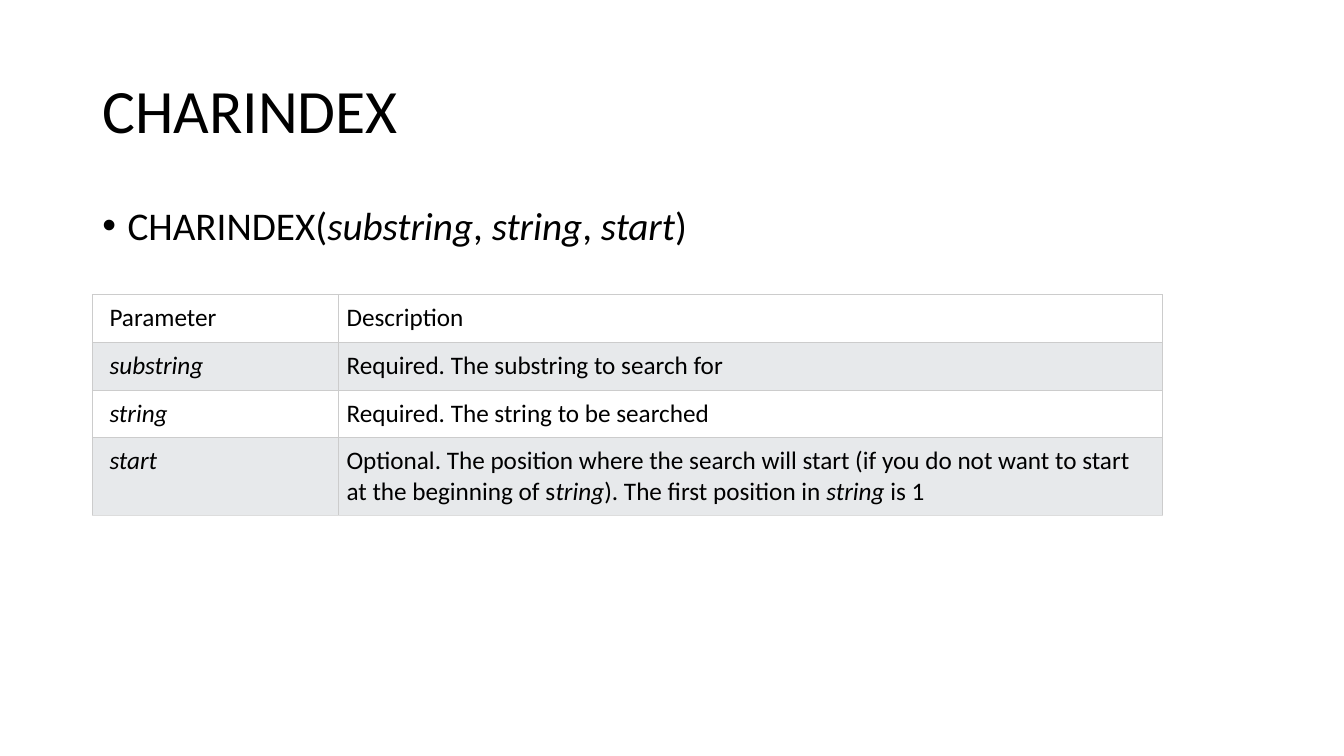
import pptx
import pptx.dml.color
import pptx.enum.text
import pptx.oxml
import pptx.oxml.ns
import pptx.util

BLACK = pptx.dml.color.RGBColor(0x00, 0x00, 0x00)
WHITE = pptx.dml.color.RGBColor(0xFF, 0xFF, 0xFF)
BAND = pptx.dml.color.RGBColor(0xE7, 0xE9, 0xEB)
BORDER = pptx.dml.color.RGBColor(0xCC, 0xCC, 0xCC)
LAST_BORDER = pptx.dml.color.RGBColor(0xDD, 0xDD, 0xDD)

# Asterisks enclose italic words.
PARAMETERS = [
    ("Parameter", "Description"),
    ("*substring*", "Required. The substring to search for"),
    ("*string*", "Required. The string to be searched"),
    ("*start*", "Optional. The position where the search will start (if you do not "
                "want to start at the beginning of s*tring*). The first position in "
                "*string* is 1"),
]


class SlideBuilder:
    """Places elements on a grid of 160 columns by 90 rows."""

    font_name = "Calibri"

    def __init__(self, deck):
        self.page = deck.slides.add_slide(deck.slide_layouts[6])
        self.column = deck.slide_width / 160
        self.row = deck.slide_height / 90

    def across(self, columns):
        return round(columns * self.column)

    def down(self, rows):
        return round(rows * self.row)

    def fill_para(self, para, text, size):
        para.font.name = self.font_name
        para.font.size = pptx.util.Pt(size)
        para.font.color.rgb = BLACK
        for index, part in enumerate(text.split("*")):
            if part:
                span = para.add_run()
                span.text = part
                span.font.italic = index % 2 == 1

    def text(self, left, top, width, height, text, size,
             anchor=pptx.enum.text.MSO_ANCHOR.TOP, bullet=False):
        box = self.page.shapes.add_textbox(
            self.across(left), self.down(top), self.across(width), self.down(height))
        frame = box.text_frame
        frame.word_wrap = True
        frame.vertical_anchor = anchor
        para = frame.paragraphs[0]
        para.line_spacing = 0.9
        if bullet:
            para.space_before = pptx.util.Pt(10)
            self.add_bullet(para)
        self.fill_para(para, text, size)

    def add_bullet(self, para):
        """Call before setting the font, whose element must come last."""
        properties = para._p.get_or_add_pPr()
        indent = pptx.util.Inches(0.25)
        properties.set("marL", str(indent))
        properties.set("indent", str(-indent))
        font = pptx.oxml.ns.qn("a:buFont")
        mark = pptx.oxml.ns.qn("a:buChar")
        properties.append(properties.makeelement(font, {"typeface": "Arial"}))
        properties.append(properties.makeelement(mark, {"char": "•"}))

    def table(self, left, top, widths, heights, rows, size):
        table = self.page.shapes.add_table(
            len(rows), len(widths), self.across(left), self.down(top),
            self.across(sum(widths)), self.down(sum(heights))).table
        table.first_row = table.horz_banding = False
        for column, width in zip(table.columns, widths):
            column.width = self.across(width)
        for index, (row, height, texts) in enumerate(zip(table.rows, heights, rows)):
            row.height = self.down(height)
            bottom = LAST_BORDER if index == len(rows) - 1 else BORDER
            for position, (cell, text) in enumerate(zip(row.cells, texts)):
                self.add_borders(cell, bottom)
                cell.fill.solid()
                cell.fill.fore_color.rgb = BAND if index % 2 else WHITE
                cell.margin_left = pptx.util.Inches(0.08 if position else 0.17)
                cell.margin_right = pptx.util.Inches(0.08)
                cell.margin_top = cell.margin_bottom = pptx.util.Inches(0.08)
                self.fill_para(cell.text_frame.paragraphs[0], text, size)

    def add_borders(self, cell, bottom):
        """Call before filling the cell, since lines must precede the fill."""
        properties = cell._tc.get_or_add_tcPr()
        sides = {"lnL": BORDER, "lnR": BORDER, "lnT": BORDER, "lnB": bottom}
        for side, color in sides.items():
            properties.append(pptx.oxml.parse_xml(
                f'<a:{side} {pptx.oxml.ns.nsdecls("a")} w="{pptx.util.Pt(0.75)}">'
                f'<a:solidFill><a:srgbClr val="{color}"/></a:solidFill></a:{side}>'))


def main():
    deck = pptx.Presentation()
    deck.slide_width = pptx.util.Inches(13.33)
    deck.slide_height = pptx.util.Inches(7.5)
    builder = SlideBuilder(deck)
    builder.text(11, 4.8, 138, 17.4, "CHARINDEX", 44,
                 anchor=pptx.enum.text.MSO_ANCHOR.MIDDLE)
    builder.text(11, 24, 138, 57.1, "CHARINDEX(*substring*, *string*, *start*)", 28,
                 bullet=True)
    builder.table(11, 35.1, [29.3, 98.1], [5.67, 5.67, 5.67, 9.3], PARAMETERS, 18)
    deck.save("out.pptx")


if __name__ == "__main__":
    main()
